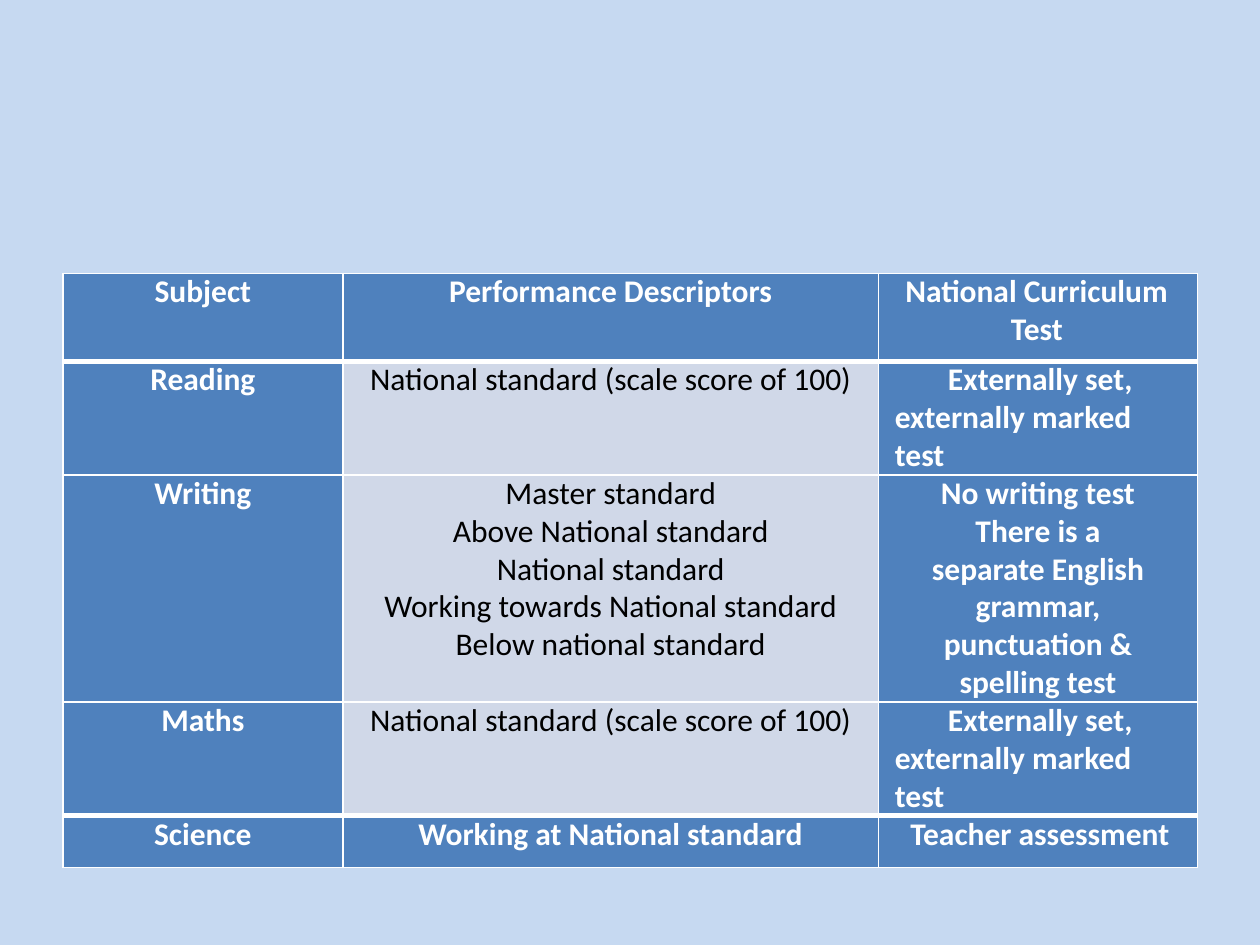
"""Build the slide with the table of subjects, performance descriptors and tests."""
from dataclasses import dataclass

from lxml.etree import SubElement
from pptx import Presentation
from pptx.dml.color import RGBColor
from pptx.enum.text import PP_ALIGN
from pptx.oxml.ns import qn
from pptx.table import _Cell
from pptx.text.text import _Paragraph
from pptx.util import Cm, Pt

BACKGROUND, BLUE, PALE, WHITE, BLACK = "C6D9F1", "4F81BD", "D0D8E8", "FFFFFF", "000000"
COLUMN_WIDTHS = (5.64, 10.8, 6.43)
ROW_HEIGHTS = (1.78, 2.29, 4.57, 2.29, 1.04)
THIN, THICK = 1, 3


@dataclass(frozen=True)
class Line:
    """A paragraph with its indents in centimetres."""
    text: str
    left: float = 0
    right: float = 0
    first: float = 0
    align: PP_ALIGN = PP_ALIGN.CENTER


@dataclass(frozen=True)
class Entry:
    """The paragraphs and colours of one cell."""
    lines: tuple[Line, ...]
    fill: str = BLUE
    color: str = WHITE
    bold: bool = True


def strong(*lines: Line) -> Entry:
    return Entry(lines)


def plain(*lines: Line) -> Entry:
    return Entry(lines, PALE, BLACK, False)


SCALE_SCORE = plain(Line("National standard (scale score of 100)"))
EXTERNAL_TEST = strong(
    Line("Externally set, externally marked test", 0.33, 0.5, 1.07, PP_ALIGN.LEFT))
ENTRIES = (
    (strong(Line("Subject")),
     strong(Line("Performance Descriptors")),
     strong(Line("National Curriculum Test", 2.67, 0, -2.13, PP_ALIGN.LEFT))),
    (strong(Line("Reading")), SCALE_SCORE, EXTERNAL_TEST),
    (strong(Line("Writing")),
     plain(Line("Master standard"),
           Line("Above National standard National standard", 2.13, 2.13),
           Line("Working towards National standard Below national standard", 0.81, 0.81)),
     strong(Line("No writing test There is a separate English grammar,", 0.86, 0.86),
            Line("punctuation & spelling test", 0.28, 0.28))),
    (strong(Line("Maths")), SCALE_SCORE, EXTERNAL_TEST),
    (strong(Line("Science")),
     strong(Line("Working at National standard")),
     strong(Line("Teacher assessment", 0.64, align=PP_ALIGN.LEFT))),
)


def rgb(value: str) -> RGBColor:
    return RGBColor.from_string(value)


def write_line(paragraph: _Paragraph, line: Line, entry: Entry) -> None:
    properties = paragraph._p.get_or_add_pPr()
    for name, length in (("marL", line.left), ("marR", line.right), ("indent", line.first)):
        properties.set(name, str(int(Cm(length))))
    paragraph.text = line.text
    paragraph.alignment = line.align
    paragraph.line_spacing = Pt(21.6)
    font = paragraph.font
    font.name, font.size, font.bold = "Calibri", Pt(18), entry.bold
    font.color.rgb = rgb(entry.color)


def draw_borders(cell: _Cell, top: float, bottom: float) -> None:
    properties = cell._tc.get_or_add_tcPr()
    for side, width in (("lnL", THIN), ("lnR", THIN), ("lnT", top), ("lnB", bottom)):
        border = SubElement(properties, qn(f"a:{side}"), w=str(int(Pt(width))))
        SubElement(SubElement(border, qn("a:solidFill")), qn("a:srgbClr"), val=WHITE)


def fill_cell(cell: _Cell, entry: Entry, top: float, bottom: float) -> None:
    cell.margin_left = cell.margin_right = cell.margin_top = cell.margin_bottom = 0
    draw_borders(cell, top, bottom)
    cell.fill.solid()
    cell.fill.fore_color.rgb = rgb(entry.fill)
    frame = cell.text_frame
    for number, line in enumerate(entry.lines):
        paragraph = frame.add_paragraph() if number else frame.paragraphs[0]
        write_line(paragraph, line, entry)


def main() -> None:
    presentation = Presentation()
    presentation.slide_width, presentation.slide_height = Cm(25.4), Cm(19.05)
    slide = presentation.slides.add_slide(presentation.slide_layouts[6])
    slide.background.fill.solid()
    slide.background.fill.fore_color.rgb = rgb(BACKGROUND)

    subjects = slide.shapes.add_table(
        len(ROW_HEIGHTS), len(COLUMN_WIDTHS), Cm(1.27), Cm(5.51),
        Cm(sum(COLUMN_WIDTHS)), Cm(sum(ROW_HEIGHTS))).table
    subjects.first_row = subjects.horz_banding = False
    for column, width in zip(subjects.columns, COLUMN_WIDTHS):
        column.width = Cm(width)
    for row, height in zip(subjects.rows, ROW_HEIGHTS):
        row.height = Cm(height)

    edges = (THIN, THICK, THIN, THIN, THICK, THIN)
    for row, entries, top, bottom in zip(subjects.rows, ENTRIES, edges, edges[1:]):
        for cell, entry in zip(row.cells, entries):
            fill_cell(cell, entry, top, bottom)
    presentation.save("out.pptx")


if __name__ == "__main__":
    main()
